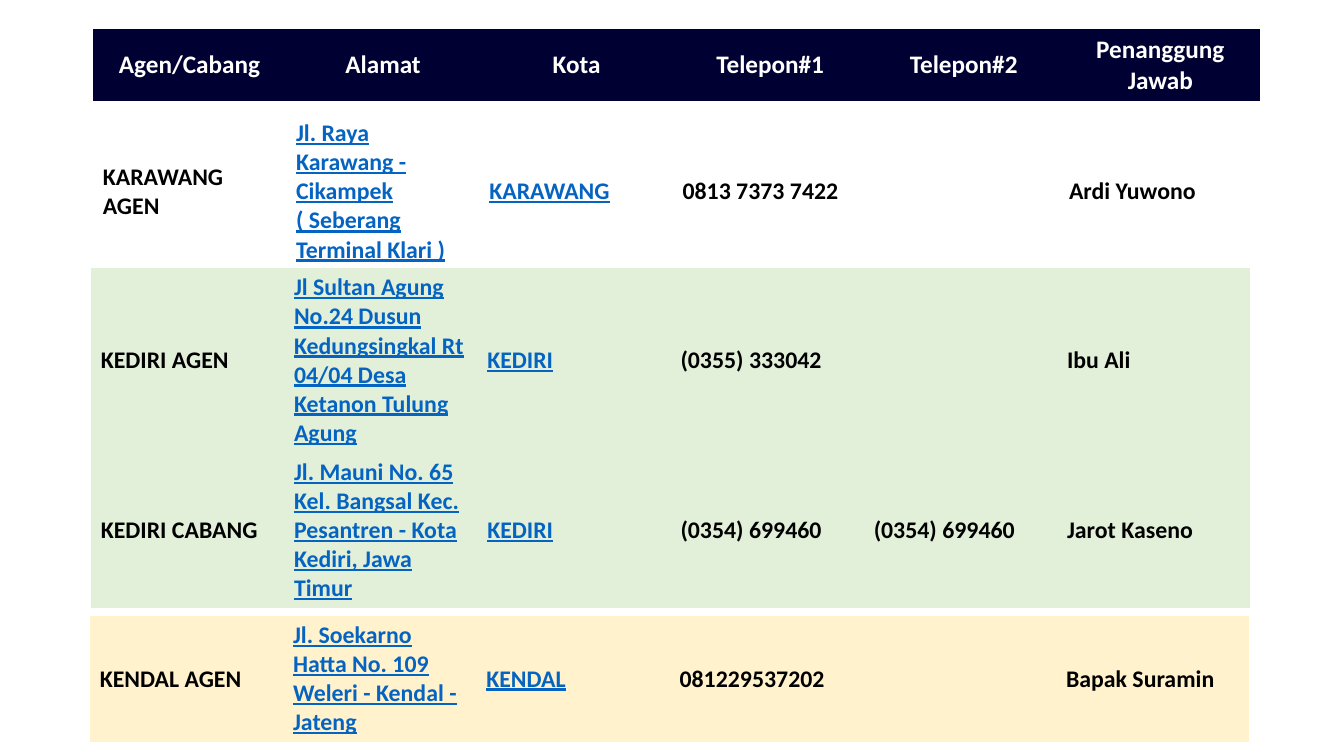
import pptx
import pptx.util
import pptx.dml.color
import pptx.enum.text

Inches = pptx.util.Inches
RGBColor = pptx.dml.color.RGBColor
ALIGN = pptx.enum.text.PP_ALIGN
ANCHOR = pptx.enum.text.MSO_ANCHOR

NAVY = RGBColor(0x00, 0x00, 0x33)
GREEN = RGBColor(0xE2, 0xF0, 0xD9)
CREAM = RGBColor(0xFF, 0xF2, 0xCC)
WHITE = RGBColor(0xFF, 0xFF, 0xFF)
BLACK = RGBColor(0x00, 0x00, 0x00)
BLUE = RGBColor(0x05, 0x63, 0xC1)
PLAIN = "{2D5ABB26-0587-4C30-8999-92F81FD0307C}"
LINKED = (1, 2)

HEADS = ["Agen/Cabang", "Alamat", "Kota", "Telepon#1", "Telepon#2", "Penanggung Jawab"]
KARAWANG = [
    ["KARAWANG AGEN", "Jl. Raya Karawang - Cikampek ( Seberang Terminal Klari )",
     "KARAWANG", "0813 7373 7422", "", "Ardi Yuwono"],
]
KEDIRI = [
    ["KEDIRI AGEN",
     "Jl Sultan Agung No.24 Dusun Kedungsingkal Rt 04/04 Desa Ketanon Tulung Agung",
     "KEDIRI", "(0355) 333042", "", "Ibu Ali"],
    ["KEDIRI CABANG",
     "Jl. Mauni No. 65 Kel. Bangsal Kec. Pesantren - Kota Kediri, Jawa Timur",
     "KEDIRI", "(0354) 699460", "(0354) 699460", "Jarot Kaseno"],
]
KENDAL = [
    ["KENDAL AGEN", "Jl. Soekarno Hatta No. 109 Weleri - Kendal - Jateng",
     "KENDAL", "081229537202", "", "Bapak Suramin"],
]


def add_grid(slide, box, rows, highs):
    left, top, width = box
    frame = slide.shapes.add_table(
        len(rows), len(HEADS), Inches(left), Inches(top), Inches(width), Inches(sum(highs)))
    grid = frame.table
    grid.first_row = False
    grid.horz_banding = False
    grid._tbl.tblPr.find(pptx.oxml.ns.qn("a:tableStyleId")).text = PLAIN
    for row, high in zip(grid.rows, highs):
        row.height = Inches(high)
    return grid


def fill_cell(cell, text, size, color, fill, align=ALIGN.LEFT, line=False):
    cell.vertical_anchor = ANCHOR.MIDDLE
    if fill is None:
        cell.fill.background()
    else:
        cell.fill.solid()
        cell.fill.fore_color.rgb = fill
    if not text:
        return
    para = cell.text_frame.paragraphs[0]
    para.alignment = align
    run = para.add_run()
    run.text = text
    font = run.font
    font.name = "Calibri"
    font.size = pptx.util.Pt(size)
    font.bold = True
    font.underline = line
    font.color.rgb = color


def add_header(slide, box):
    grid = add_grid(slide, box, [HEADS], [0.71])
    for col in list(grid.columns)[:-1]:
        col.width = Inches(1.92)
    grid.columns[len(HEADS) - 1].width = Inches(box[2] - 1.92 * (len(HEADS) - 1))
    for cell, text in zip(grid.rows[0].cells, HEADS):
        fill_cell(cell, text, 18, WHITE, NAVY, ALIGN.CENTER)


def add_agents(slide, box, agents, highs, fill=None):
    grid = add_grid(slide, box, agents, highs)
    for row, agent in zip(grid.rows, agents):
        for idx, (cell, text) in enumerate(zip(row.cells, agent)):
            linked = idx in LINKED
            fill_cell(cell, text, 17, BLUE if linked else BLACK, fill, line=linked)


def main():
    deck = pptx.Presentation()
    deck.slide_width = Inches(13.33)
    deck.slide_height = Inches(7.5)
    slide = deck.slides.add_slide(deck.slide_layouts[6])
    add_agents(slide, (0.92, 1.13, 11.5), KARAWANG, [1.52])
    add_header(slide, (0.92, 0.29, 11.58))
    add_agents(slide, (0.9, 2.66, 11.5), KEDIRI, [1.8, 1.52], GREEN)
    add_agents(slide, (0.89, 6.11, 11.5), KENDAL, [1.23], CREAM)
    deck.save("out.pptx")


if __name__ == "__main__":
    main()
